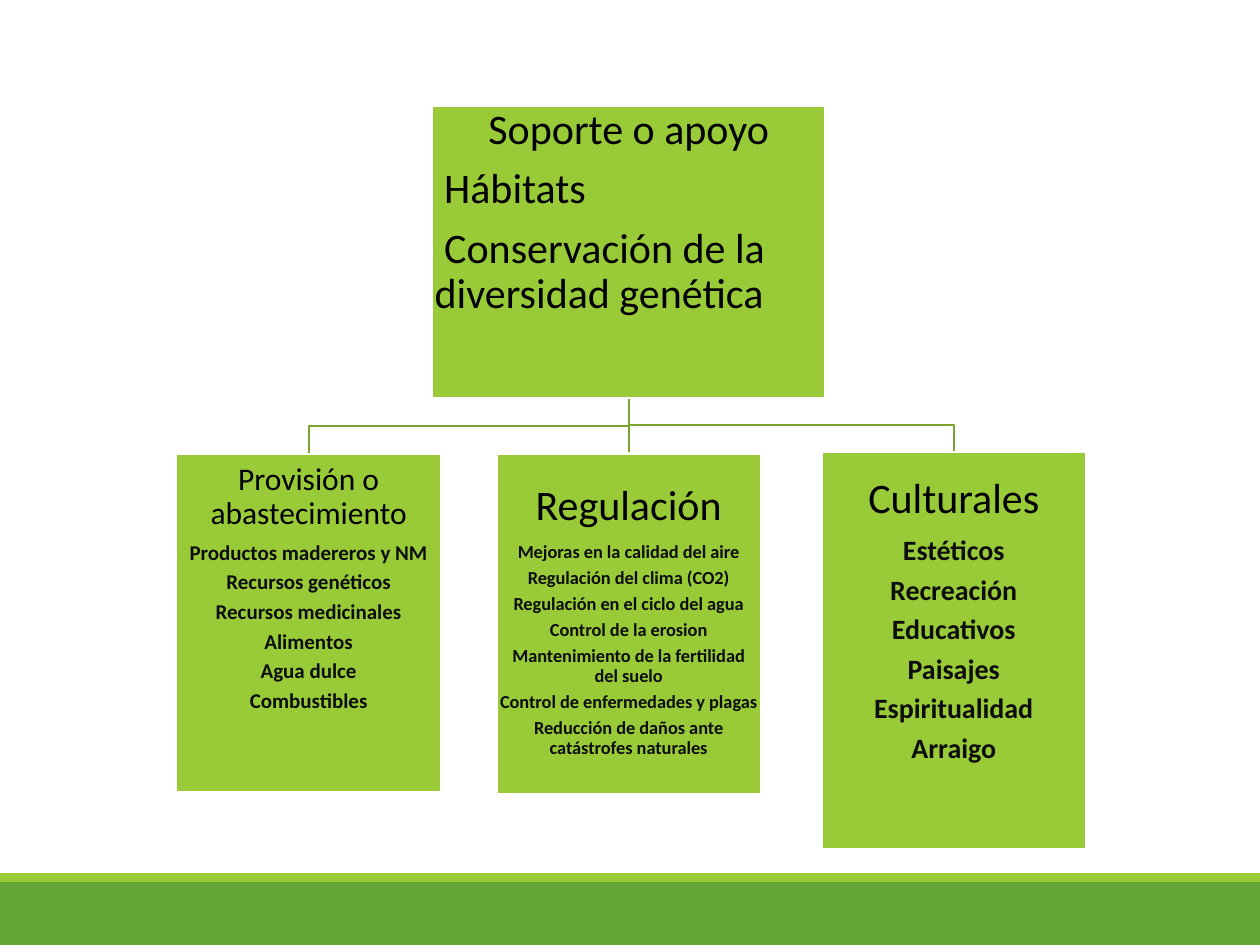
from dataclasses import dataclass

from lxml.etree import SubElement
from pptx import Presentation
from pptx.dml.color import RGBColor
from pptx.enum.shapes import MSO_CONNECTOR, MSO_SHAPE
from pptx.enum.text import MSO_ANCHOR, PP_ALIGN
from pptx.oxml.ns import qn
from pptx.shapes.autoshape import Shape
from pptx.slide import Slide
from pptx.util import Inches, Pt


@dataclass(frozen=True)
class Theme:
    font: str = "Calibri"
    heading: RGBColor = RGBColor(0x00, 0x00, 0x00)
    item: RGBColor = RGBColor(0x0D, 0x0D, 0x0D)
    light_green: RGBColor = RGBColor(0x99, 0xCB, 0x38)
    dark_green: RGBColor = RGBColor(0x63, 0xA5, 0x37)
    branch: RGBColor = RGBColor(0x7B, 0xA3, 0x2D)
    border: RGBColor = RGBColor(0xFF, 0xFF, 0xFF)
    line_width: float = 1.25
    heading_size: float = 24
    small_heading_size: float = 18
    line_spacing: float = 0.9
    gap_ratio: float = 0.33  # space after, as a share of the type size


THEME = Theme()


@dataclass(frozen=True)
class Service:
    heading: str
    items: tuple[str, ...]
    left: float
    top: float
    width: float
    height: float
    text_top: float
    item_size: float
    heading_size: float = THEME.heading_size
    side_inset: float = 0.02
    item_align: PP_ALIGN = PP_ALIGN.CENTER
    item_bold: bool = True
    item_color: RGBColor = THEME.item


SUPPORT = Service(
    "Soporte o apoyo",
    (" Hábitats", " Conservación de la diversidad genética"),
    3.43, 0.84, 3.12, 2.32, text_top=0.02, item_size=THEME.heading_size,
    item_align=PP_ALIGN.LEFT, item_bold=False, item_color=THEME.heading,
)
PROVISION = Service(
    "Provisión o abastecimiento",
    ("Productos madereros y NM", "Recursos genéticos", "Recursos medicinales",
     "Alimentos", "Agua dulce", "Combustibles"),
    1.4, 3.6, 2.1, 2.69, text_top=0.08, item_size=12,
    heading_size=THEME.small_heading_size, side_inset=0.01,
)
REGULATION = Service(
    "Regulación",
    ("Mejoras en la calidad del aire", "Regulación del clima (CO2)",
     "Regulación en el ciclo del agua", "Control de la erosion",
     "Mantenimiento de la fertilidad del suelo",
     "Control de enfermedades y plagas",
     "Reducción de daños ante catástrofes naturales"),
    3.94, 3.6, 2.1, 2.7, text_top=0.24, item_size=10.5,
)
CULTURE = Service(
    "Culturales",
    ("Estéticos", "Recreación", "Educativos", "Paisajes", "Espiritualidad",
     "Arraigo"),
    6.52, 3.59, 2.1, 3.15, text_top=0.2, item_size=16,
)


def add_rectangle(slide: Slide, left: float, top: float, width: float,
                  height: float, color: RGBColor) -> Shape:
    rectangle = slide.shapes.add_shape(
        MSO_SHAPE.RECTANGLE,
        Inches(left), Inches(top), Inches(width), Inches(height))
    rectangle.shadow.inherit = False
    rectangle.fill.solid()
    rectangle.fill.fore_color.rgb = color
    rectangle.line.fill.background()
    return rectangle


def set_line(shape, color: RGBColor) -> None:
    shape.line.color.rgb = color
    shape.line.width = Pt(THEME.line_width)


def write_paragraph(paragraph, text: str, size: float, color: RGBColor,
                    align: PP_ALIGN, bold: bool) -> None:
    paragraph.text = text
    paragraph.alignment = align
    paragraph.line_spacing = THEME.line_spacing
    paragraph.space_after = Pt(round(size * THEME.gap_ratio, 1))
    paragraph.font.name = THEME.font
    paragraph.font.size = Pt(size)
    paragraph.font.bold = bold
    paragraph.font.color.rgb = color


def add_service(slide: Slide, service: Service) -> Shape:
    box = add_rectangle(slide, service.left, service.top, service.width,
                        service.height, THEME.light_green)
    set_line(box, THEME.border)
    frame = box.text_frame
    frame.word_wrap = True
    frame.vertical_anchor = MSO_ANCHOR.TOP
    frame.margin_left = frame.margin_right = Inches(service.side_inset)
    frame.margin_top, frame.margin_bottom = Inches(service.text_top), 0
    write_paragraph(frame.paragraphs[0], service.heading, service.heading_size,
                    THEME.heading, PP_ALIGN.CENTER, False)
    for item in service.items:
        write_paragraph(frame.add_paragraph(), item, service.item_size,
                        service.item_color, service.item_align,
                        service.item_bold)
    return box


def add_elbow(slide: Slide, parent: Shape, child: Shape) -> None:
    """Branch down, across and down again, behind the boxes."""
    start_x, start_y = parent.left + parent.width // 2, parent.top + parent.height
    end_x, end_y = child.left + child.width // 2, child.top
    middle_y = (start_y + end_y) // 2
    builder = slide.shapes.build_freeform(start_x, start_y)
    builder.add_line_segments(
        [(start_x, middle_y), (end_x, middle_y), (end_x, end_y)], close=False)
    elbow = builder.convert_to_shape()
    elbow.shadow.inherit = False
    elbow.fill.background()
    set_line(elbow, THEME.branch)
    parent.element.addprevious(elbow.element)


def add_straight_branch(slide: Slide, parent: Shape, child: Shape) -> None:
    branch = slide.shapes.add_connector(MSO_CONNECTOR.STRAIGHT, 0, 0, 0, 0)
    branch.begin_connect(parent, 2)
    branch.end_connect(child, 0)
    set_line(branch, THEME.branch)
    SubElement(branch.element.spPr, qn("a:effectLst"))
    parent.element.addprevious(branch.element)


def main() -> None:
    presentation = Presentation()
    presentation.slide_width, presentation.slide_height = Inches(10), Inches(7.5)
    slide = presentation.slides.add_slide(presentation.slide_layouts[6])

    # Footer bands
    add_rectangle(slide, 0, 7, 10, 0.5, THEME.dark_green)
    add_rectangle(slide, 0, 6.93, 10, 0.07, THEME.light_green)

    # Service boxes
    support, provision, regulation, culture = (
        add_service(slide, service)
        for service in (SUPPORT, PROVISION, REGULATION, CULTURE))

    # Branches
    add_elbow(slide, support, culture)
    add_straight_branch(slide, support, regulation)
    add_elbow(slide, support, provision)

    presentation.save("out.pptx")


if __name__ == "__main__":
    main()
